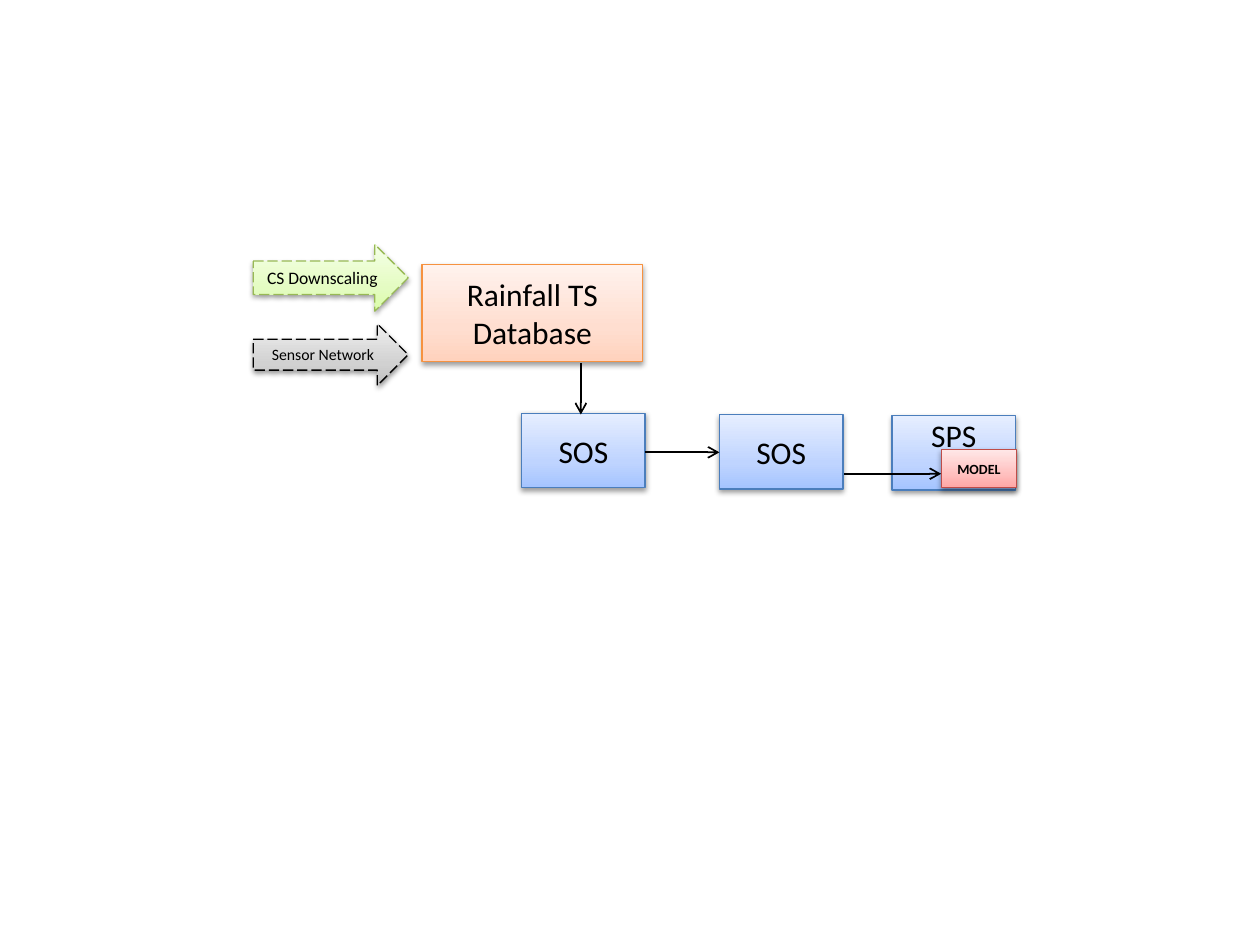
"""Build a slide showing rainfall data flowing through sensor services to a model."""
from copy import deepcopy

from pptx import Presentation
from pptx.dml.color import RGBColor
from pptx.enum.dml import MSO_LINE
from pptx.enum.shapes import MSO_CONNECTOR, MSO_SHAPE
from pptx.enum.text import MSO_ANCHOR, PP_ALIGN
from pptx.oxml import parse_xml
from pptx.oxml.ns import nsdecls, qn
from pptx.util import Inches, Pt

RECT, ARROW = MSO_SHAPE.RECTANGLE, MSO_SHAPE.RIGHT_ARROW
MIDDLE, TOP = MSO_ANCHOR.MIDDLE, MSO_ANCHOR.TOP
CENTER, LONG_DASH = PP_ALIGN.CENTER, MSO_LINE.LONG_DASH
STRAIGHT = MSO_CONNECTOR.STRAIGHT

BLACK = "000000"
STOPS = (0, 0.35, 1)
PALETTES = {
    "blue": ("A4C4FF", "BFD4FF", "E6EEFF", "4B7EBC"),
    "red": ("FFA6A5", "FFC0BF", "FFE7E7", "BF4C48"),
    "orange": ("FFD2BD", "FFDED0", "FFF2ED", "F69240"),
    "green": ("DAFDA7", "E4FCC2", "F5FFE7", "98B955"),
    "gray": ("BDBDBD", "D1D1D1", "EEEEEE", BLACK),
}
SERVICE = (0.98, 0.59)
SERVICES = [
    ("SOS", (5.71, 3.29), MIDDLE),
    ("SPS", (7.08, 3.3), TOP),
    ("SOS", (4.14, 3.28), MIDDLE),
]
MODEL = ("MODEL", (7.47, 3.57), (0.6, 0.3), "red", 8)
DATABASE = ("Rainfall TS\vDatabase", (3.35, 2.1), (1.75, 0.77), "orange", 18)
INPUTS = [
    ("CS Downscaling", (2.01, 1.94), (1.23, 0.53), "green", 10),
    ("Sensor Network", (2.01, 2.57), (1.23, 0.49), "gray", 9),
]
SERVICE_FLOWS = [((5.12, 3.59), (5.71, 3.59)), ((6.7, 3.76), (7.47, 3.76))]
DATABASE_FLOW = ((4.61, 2.88), (4.61, 3.29))


def color(value):
    return RGBColor.from_string(value)


def fill_gradient(shape, shades):
    shape.fill.gradient()
    shape.fill.gradient_angle = 90
    stop_list = shape._element.spPr.find(".//" + qn("a:gsLst"))
    stop_list.append(deepcopy(stop_list[-1]))
    for stop, position, shade in zip(shape.fill.gradient_stops, STOPS, shades):
        stop.position = position
        stop.color.rgb = color(shade)


def add_shadow(shape):
    shape._element.spPr.append(parse_xml(
        f'<a:effectLst {nsdecls("a")}>'
        f'<a:outerShdw blurRad="{Pt(3.1)}" dist="{Pt(1.6)}" dir="5400000" rotWithShape="0">'
        f'<a:srgbClr val="{BLACK}"><a:alpha val="38000"/></a:srgbClr>'
        '</a:outerShdw></a:effectLst>'))


def add_block(page, text, corner, size, palette, points,
              kind=RECT, anchor=MIDDLE, bold=False):
    shape = page.shapes.add_shape(kind, *map(Inches, corner + size))
    *shades, outline = PALETTES[palette]
    fill_gradient(shape, shades)
    shape.line.color.rgb = color(outline)
    shape.line.width = Pt(0.75)
    if kind == ARROW:
        shape.line.dash_style = LONG_DASH
    add_shadow(shape)
    frame = shape.text_frame
    frame.word_wrap = False
    frame.vertical_anchor = anchor
    if anchor == TOP:
        frame.margin_top = 0
    frame.text = text
    para = frame.paragraphs[0]
    para.alignment = CENTER
    para.font.name = "Calibri"
    para.font.size = Pt(points)
    para.font.bold = bold
    para.font.color.rgb = color(BLACK)


def add_flow(page, start, end):
    flow = page.shapes.add_connector(STRAIGHT, *map(Inches, start + end))
    flow.line.color.rgb = color(BLACK)
    flow.line.width = Pt(1)
    flow.line._get_or_add_ln().append(
        parse_xml(f'<a:tailEnd {nsdecls("a")} type="arrow"/>'))
    flow._element.spPr.append(parse_xml(f'<a:effectLst {nsdecls("a")}/>'))


def main():
    deck = Presentation()
    deck.slide_width, deck.slide_height = Inches(10), Inches(7.5)
    page = deck.slides.add_slide(deck.slide_layouts[6])
    for text, corner, anchor in SERVICES:
        add_block(page, text, corner, SERVICE, "blue", 18, anchor=anchor)
    for flow in SERVICE_FLOWS:
        add_flow(page, *flow)
    add_block(page, *MODEL, bold=True)
    add_block(page, *DATABASE)
    for source in INPUTS:
        add_block(page, *source, kind=ARROW)
    add_flow(page, *DATABASE_FLOW)
    deck.save("out.pptx")


if __name__ == "__main__":
    main()
